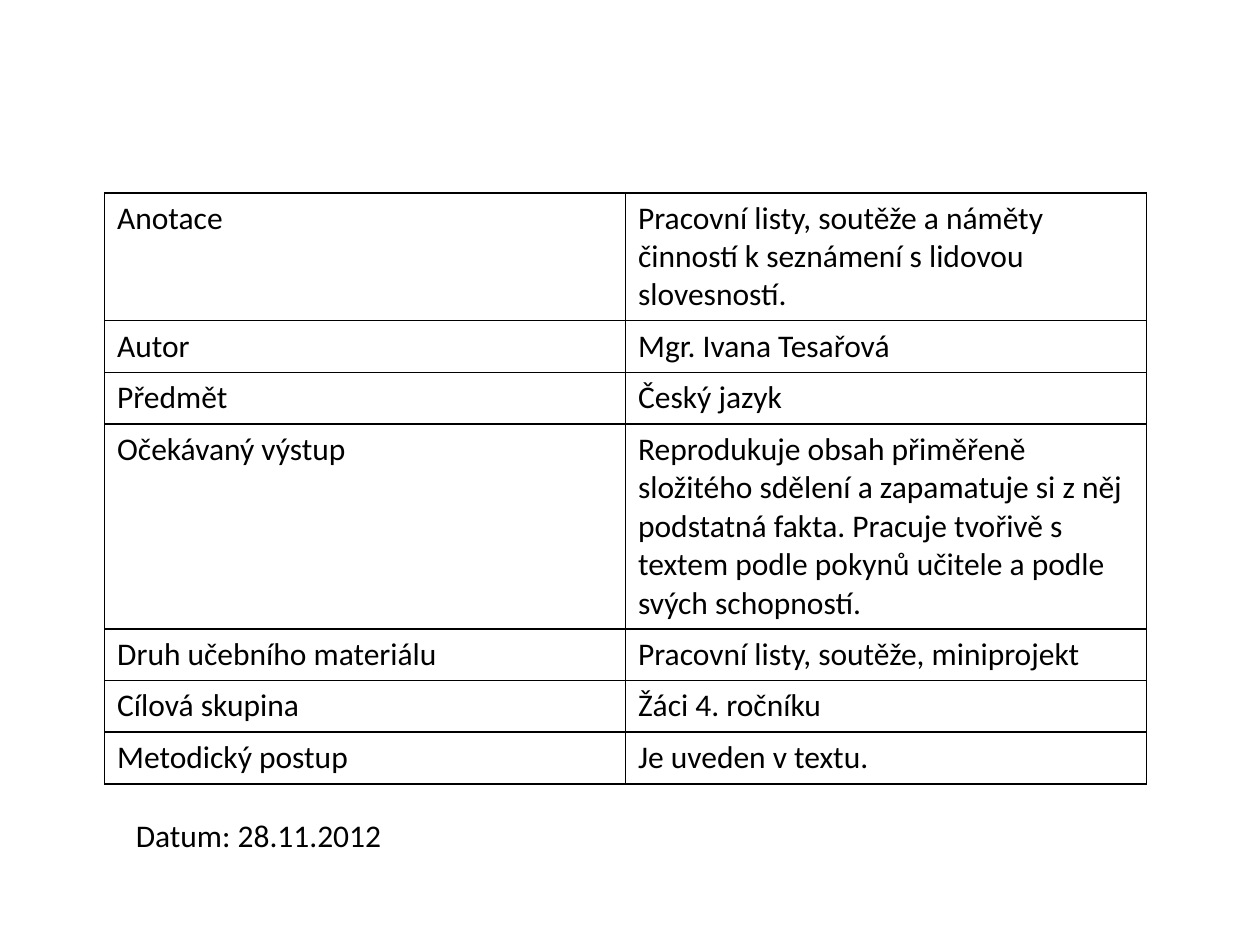
from lxml import etree
from pptx import Presentation
from pptx.dml.color import RGBColor
from pptx.enum.text import MSO_AUTO_SIZE
from pptx.oxml.ns import qn
from pptx.util import Inches, Pt

SHAPE_TO_FIT = MSO_AUTO_SIZE.SHAPE_TO_FIT_TEXT
FONT = "Calibri"
BLACK = "000000"
ROW_HEIGHT = 0.41
ROWS = [
    ("Anotace", "Pracovní listy, soutěže a náměty činností k seznámení s lidovou slovesností."),
    ("Autor", "Mgr. Ivana Tesařová"),
    ("Předmět", "Český jazyk"),
    ("Očekávaný výstup",
     "Reprodukuje obsah přiměřeně složitého sdělení a zapamatuje si z něj podstatná fakta. "
     "Pracuje tvořivě s textem podle pokynů učitele a podle svých schopností."),
    ("Druh učebního materiálu", "Pracovní listy, soutěže, miniprojekt"),
    ("Cílová skupina", "Žáci 4. ročníku"),
    ("Metodický postup", "Je uveden v textu."),
]


def rgb(color):
    return RGBColor.from_string(color)


def set_text(tf, text):
    p = tf.paragraphs[0]
    p.text = text
    p.font.name = FONT
    p.font.size = Pt(18)
    p.font.color.rgb = rgb(BLACK)


def set_borders(cell, color, width):
    tc_pr = cell._tc.get_or_add_tcPr()
    for side in ("a:lnL", "a:lnR", "a:lnT", "a:lnB"):
        ln = etree.SubElement(tc_pr, qn(side), w=str(Pt(width)))
        fill = etree.SubElement(ln, qn("a:solidFill"))
        etree.SubElement(fill, qn("a:srgbClr"), val=color)


def add_info_table(s, rows, left, top, width):
    frame = s.shapes.add_table(len(rows), len(rows[0]), Inches(left), Inches(top),
                               Inches(width), Inches(ROW_HEIGHT * len(rows)))
    table = frame.table
    table.first_row = False
    table.horz_banding = False
    for row, texts in zip(table.rows, rows):
        row.height = Inches(ROW_HEIGHT)
        for cell, text in zip(row.cells, texts):
            set_text(cell.text_frame, text)
            set_borders(cell, BLACK, 1)
            cell.fill.background()


def add_label(s, text, left, top, width, height):
    sp = s.shapes.add_textbox(Inches(left), Inches(top), Inches(width), Inches(height))
    tf = sp.text_frame
    tf.word_wrap = False
    tf.auto_size = SHAPE_TO_FIT
    set_text(tf, text)


def main():
    prs = Presentation()
    prs.slide_width = Inches(10)
    prs.slide_height = Inches(7.5)
    s = prs.slides.add_slide(prs.slide_layouts[6])
    add_info_table(s, ROWS, 0.83, 1.53, 8.27)
    add_label(s, "Datum: 28.11.2012", 0.98, 6.43, 2.17, 0.4)
    prs.save("out.pptx")


if __name__ == "__main__":
    main()
